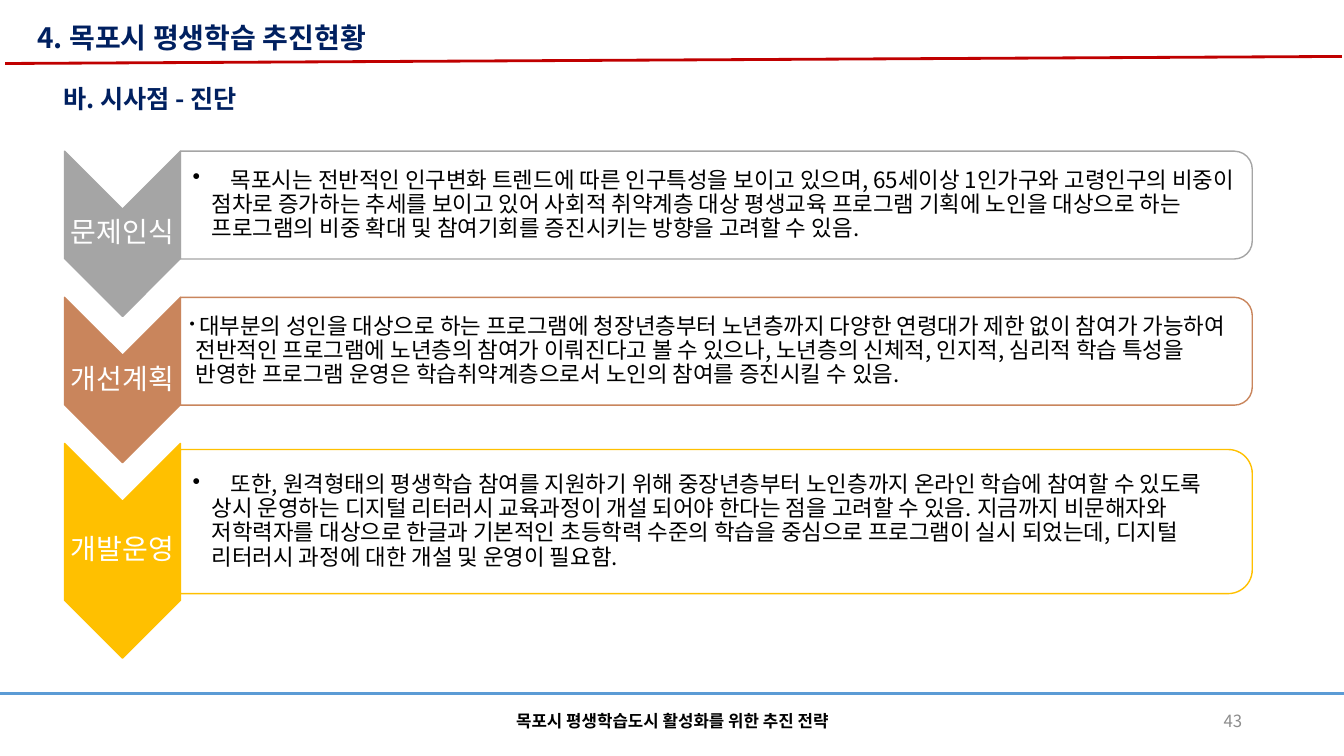
from collections import namedtuple

from lxml.etree import SubElement
from pptx import Presentation
from pptx.dml.color import RGBColor
from pptx.enum.shapes import MSO_CONNECTOR as CONNECTOR, MSO_SHAPE as SHAPE
from pptx.enum.text import MSO_ANCHOR as ANCHOR, PP_ALIGN as ALIGN
from pptx.oxml.ns import qn
from pptx.util import Inches, Pt

FONT = "Noto Sans CJK KR"
COLORS = {
    "navy": "002060", "red": "C00000", "blue": "5B9BD5", "number": "8C8C8C",
    "black": "000000", "white": "FFFFFF",
    "gray": "A5A5A5", "brown": "C9855C", "gold": "FFC000",
}
STEP_LEFT, STEP_TOP, STEP_PITCH = 0.64, 1.5, 1.45
CHEVRON_WIDTH, PANEL_WIDTH = 1.15, 10.63

Step = namedtuple("Step", "label color height panel_top panel_height inset hanging tab body")
STEPS = [
    Step("문제인식", "gray", 1.64, 1.5, 1.07, 0.12, 0.19, 0.38,
         "목포시는 전반적인 인구변화 트렌드에 따른 인구특성을 보이고 있으며, 65세이상 1인가구와 "
         "고령인구의 비중이 점차로 증가하는 추세를 보이고 있어 사회적 취약계층 대상 평생교육 프로그램 "
         "기획에 노인을 대상으로 하는 프로그램의 비중 확대 및 참여기회를 증진시키는 방향을 고려할 수 있음."),
    Step("개선계획", "brown", 1.64, 2.95, 1.07, 0.09, 0.06, None,
         "대부분의 성인을 대상으로 하는 프로그램에 청장년층부터 노년층까지 다양한 연령대가 제한 없이 "
         "참여가 가능하여 전반적인 프로그램에 노년층의 참여가 이뤄진다고 볼 수 있으나, 노년층의 신체적, "
         "인지적, 심리적 학습 특성을 반영한 프로그램 운영은 학습취약계층으로서 노인의 참여를 증진시킬 수 있음."),
    Step("개발운영", "gold", 2.13, 4.46, 1.43, 0.12, 0.19, 0.38,
         "또한, 원격형태의 평생학습 참여를 지원하기 위해 중장년층부터 노인층까지 온라인 학습에 참여할 수 "
         "있도록 상시 운영하는 디지털 리터러시 교육과정이 개설 되어야 한다는 점을 고려할 수 있음. 지금까지 "
         "비문해자와 저학력자를 대상으로 한글과 기본적인 초등학력 수준의 학습을 중심으로 프로그램이 실시 "
         "되었는데, 디지털 리터러시 과정에 대한 개설 및 운영이 필요함."),
]


def rgb(name):
    return RGBColor.from_string(COLORS[name])


def add_run(paragraph, text, size, color, bold=False):
    run = paragraph.add_run()
    run.text = text
    font = run.font
    font.name, font.size, font.bold = FONT, Pt(size), bold
    font.color.rgb = rgb(color)
    SubElement(font._element, qn("a:ea"), typeface=FONT)


def set_frame(frame, anchor, insets=(0.1, 0.05, 0.1, 0.05)):
    frame.word_wrap = True
    frame.vertical_anchor = anchor
    (frame.margin_left, frame.margin_top,
     frame.margin_right, frame.margin_bottom) = map(Inches, insets)
    return frame.paragraphs[0]


def add_text_box(slide, box, anchor, insets=(0.1, 0.05, 0.1, 0.05)):
    shape = slide.shapes.add_textbox(*map(Inches, box))
    return set_frame(shape.text_frame, anchor, insets)


def add_label(slide, box, text, size, color, bold=False, align=ALIGN.LEFT, anchor=ANCHOR.MIDDLE):
    paragraph = add_text_box(slide, box, anchor)
    paragraph.alignment = align
    add_run(paragraph, text, size, color, bold)


def add_title(slide, text):
    title = slide.shapes.title
    title.left, title.top, title.width, title.height = map(Inches, (0.27, 0.15, 5.87, 0.44))
    paragraph = set_frame(title.text_frame, ANCHOR.TOP)
    paragraph.alignment = ALIGN.LEFT
    paragraph.line_spacing = 1.0
    add_run(paragraph, text, 20, "navy", True)


def add_rule(slide, start, end, color, width):
    rule = slide.shapes.add_connector(CONNECTOR.STRAIGHT, *map(Inches, start + end))
    rule.line.color.rgb = rgb(color)
    rule.line.width = Pt(width)
    SubElement(rule._element.spPr, qn("a:effectLst"))


def add_turned_shape(slide, kind, box, fill, line):
    left, top, width, height = box
    shape = slide.shapes.add_shape(
        kind, Inches(left + (width - height) / 2), Inches(top + (height - width) / 2),
        Inches(height), Inches(width))
    shape.rotation = 90
    shape.shadow.inherit = False
    shape.fill.solid()
    shape.fill.fore_color.rgb = rgb(fill)
    shape.line.color.rgb = rgb(line)
    shape.line.width = Pt(1)
    return shape


def set_bullet(paragraph, hanging, tab):
    properties = paragraph._p.get_or_add_pPr()
    properties.set("marL", str(Inches(hanging)))
    properties.set("indent", str(-Inches(hanging)))
    SubElement(properties, qn("a:buChar"), char="•")
    if tab:
        stops = SubElement(properties, qn("a:tabLst"))
        SubElement(stops, qn("a:tab"), pos=str(Inches(tab)), algn="l")


def add_step(slide, index, step):
    top = STEP_TOP + index * STEP_PITCH
    add_turned_shape(slide, SHAPE.CHEVRON, (STEP_LEFT, top, CHEVRON_WIDTH, step.height),
                     step.color, step.color)
    label_box = (STEP_LEFT, top + CHEVRON_WIDTH / 2, CHEVRON_WIDTH, step.height - CHEVRON_WIDTH)
    label = add_text_box(slide, label_box, ANCHOR.MIDDLE, (0.01,) * 4)
    label.alignment = ALIGN.CENTER
    label.line_spacing = 0.9
    add_run(label, step.label, 20, "white")

    panel_left = STEP_LEFT + CHEVRON_WIDTH
    panel = add_turned_shape(slide, SHAPE.ROUND_2_SAME_RECTANGLE,
                             (panel_left, step.panel_top, PANEL_WIDTH, step.panel_height),
                             "white", step.color)
    fill_color = panel._element.spPr.find(qn("a:solidFill"))[0]
    SubElement(fill_color, qn("a:alpha"), val="90000")

    body_box = (panel_left, step.panel_top + 0.06, PANEL_WIDTH - 0.06, step.panel_height - 0.12)
    body = add_text_box(slide, body_box, ANCHOR.MIDDLE, (step.inset, 0.01, 0.01, 0.01))
    body.line_spacing = 0.9
    set_bullet(body, step.hanging, step.tab)
    if step.tab:
        add_run(body, "\t" + step.body, 16, "black")
    else:
        add_run(body, " ", 11, "black")
        add_run(body, step.body, 16, "black")


def main():
    presentation = Presentation()
    presentation.slide_width = Inches(13.33)
    presentation.slide_height = Inches(7.5)
    slide = presentation.slides.add_slide(presentation.slide_layouts[5])

    add_rule(slide, (0.05, 0.63), (13.31, 0.56), "red", 2)
    add_rule(slide, (0, 6.88), (13.33, 6.88), "blue", 1.5)
    add_label(slide, (9.42, 6.95, 3, 0.4), "43", 12, "number", align=ALIGN.RIGHT)
    add_label(slide, (4.42, 6.95, 4.5, 0.4), "목포시 평생학습도시 활성화를 위한 추진 전략", 12,
              "black", True, ALIGN.CENTER)
    add_title(slide, "4. 목포시 평생학습 추진현황")
    add_label(slide, (0.53, 0.78, 5.87, 0.4), "바. 시사점 - 진단", 18, "navy", True,
              anchor=ANCHOR.TOP)
    for index, step in enumerate(STEPS):
        add_step(slide, index, step)

    presentation.save("out.pptx")


if __name__ == "__main__":
    main()
